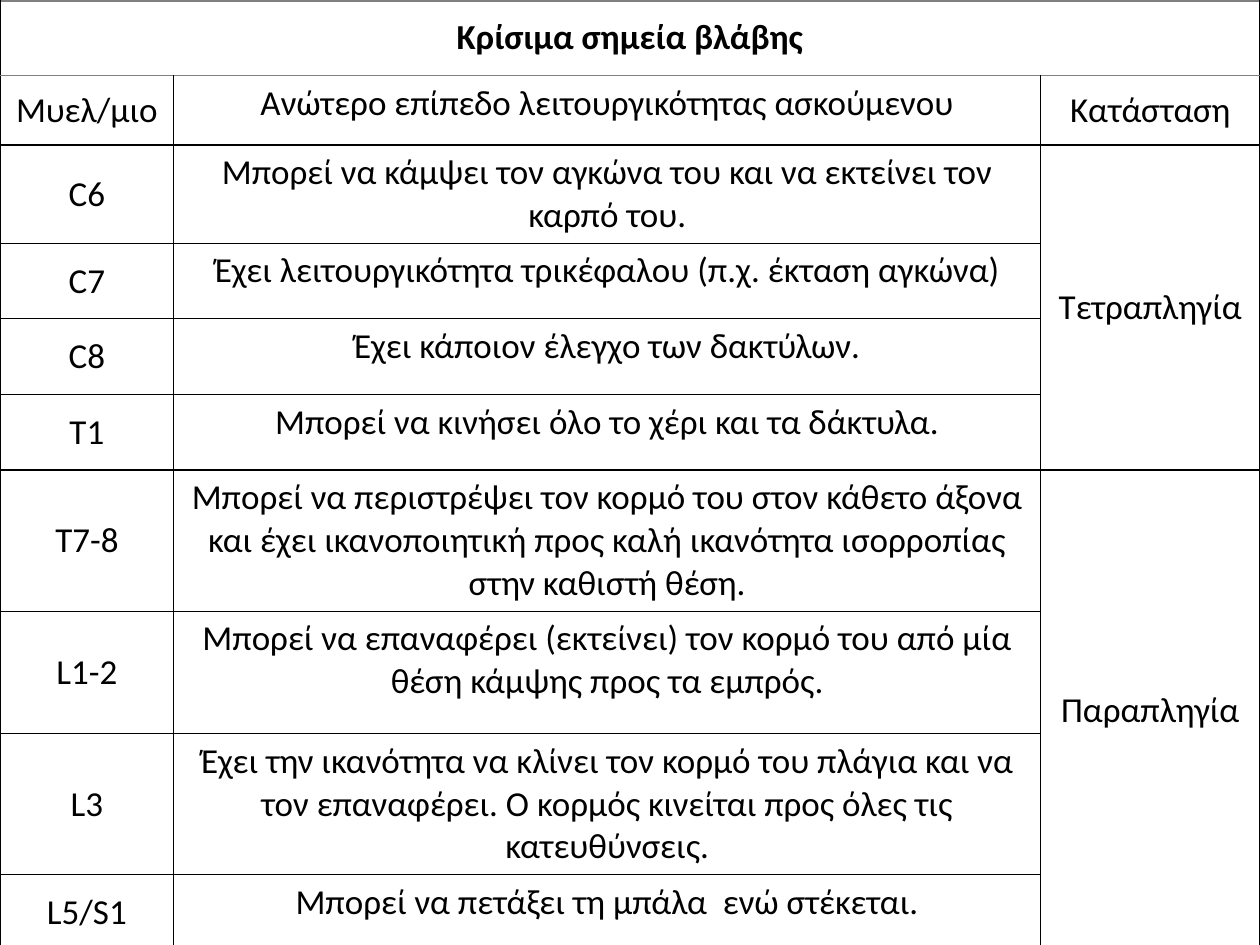
import pptx
import pptx.dml.color
import pptx.enum.text
import pptx.oxml.ns
import pptx.util
from dataclasses import dataclass
from lxml import etree

Pt = pptx.util.Pt
RGB = pptx.dml.color.RGBColor
ANCHOR = pptx.enum.text.MSO_ANCHOR
ALIGN = pptx.enum.text.PP_ALIGN


@dataclass(frozen=True)
class Theme:
    font: str = "Calibri"
    size: float = 20
    text: str = "000000"
    thin: tuple = ("000000", 0.75)
    section: tuple = ("000000", 1)
    heading: tuple = ("808080", 1)
    outer: tuple = ("808080", 2)


THEME = Theme()
TITLE = "Κρίσιμα σημεία βλάβης"
HEADER = ("Μυελ/μιο", "Ανώτερο επίπεδο λειτουργικότητας ασκούμενου", "Κατάσταση")
GROUPS = [
    ("Τετραπληγία", [
        ("C6", "Μπορεί να κάμψει τον αγκώνα του και να εκτείνει τον καρπό του."),
        ("C7", "Έχει λειτουργικότητα τρικέφαλου (π.χ. έκταση αγκώνα)"),
        ("C8", "Έχει κάποιον έλεγχο των δακτύλων."),
        ("T1", "Μπορεί να κινήσει όλο το χέρι και τα δάκτυλα."),
    ]),
    ("Παραπληγία", [
        ("T7-8", "Μπορεί να περιστρέψει τον κορμό του στον κάθετο άξονα και έχει "
                 "ικανοποιητική προς καλή ικανότητα ισορροπίας στην καθιστή θέση."),
        ("L1-2", "Μπορεί να επαναφέρει (εκτείνει) τον κορμό του από μία θέση κάμψης "
                 "προς τα εμπρός."),
        ("L3", "Έχει την ικανότητα να κλίνει τον κορμό του πλάγια και να τον επαναφέρει. "
               "Ο κορμός κινείται προς όλες τις κατευθύνσεις."),
        ("L5/S1", "Μπορεί να πετάξει τη μπάλα  ενώ στέκεται."),
    ]),
]
COL_WIDTHS = (99.36, 495.36, 125.28)
ROW_HEIGHTS = (43.2, 39.6) + (43.2,) * 4 + (69.84,) * 3 + (43.2,)


def set_border(cell, side, line):
    color, width = line
    ln = etree.SubElement(cell._tc.get_or_add_tcPr(), pptx.oxml.ns.qn(f"a:ln{side}"),
                          w=str(int(Pt(width))))
    fill = etree.SubElement(ln, pptx.oxml.ns.qn("a:solidFill"))
    etree.SubElement(fill, pptx.oxml.ns.qn("a:srgbClr"), val=color)


def fill_cell(cell, text, top, bottom, anchor=ANCHOR.MIDDLE, bold=False):
    for side, line in zip("LRTB", (THEME.thin, THEME.thin, top, bottom)):
        set_border(cell, side, line)
    cell.fill.background()
    cell.vertical_anchor = anchor
    cell.text_frame.text = text
    p = cell.text_frame.paragraphs[0]
    p.alignment = ALIGN.CENTER
    font = p.runs[0].font
    font.name, font.size, font.bold = THEME.font, Pt(THEME.size), bold
    font.color.rgb = RGB.from_string(THEME.text)


def add_lesion_table(slide, left, top, width, height):
    table = slide.shapes.add_table(len(ROW_HEIGHTS), len(COL_WIDTHS),
                                   Pt(left), Pt(top), Pt(width), Pt(height)).table
    table.first_row = table.horz_banding = False
    for col, w in zip(table.columns, COL_WIDTHS):
        col.width = Pt(w)
    for row, h in zip(table.rows, ROW_HEIGHTS):
        row.height = Pt(h)

    table.cell(0, 0).merge(table.cell(0, 2))
    fill_cell(table.cell(0, 0), TITLE, THEME.outer, THEME.heading, bold=True)
    anchors = (ANCHOR.MIDDLE, ANCHOR.TOP, ANCHOR.MIDDLE)
    for c, (text, anchor) in enumerate(zip(HEADER, anchors)):
        fill_cell(table.cell(1, c), text, THEME.heading, THEME.section, anchor)

    first = 2
    for status, levels in GROUPS:
        last = first + len(levels) - 1
        end = THEME.outer if last == len(ROW_HEIGHTS) - 1 else THEME.section
        table.cell(first, 2).merge(table.cell(last, 2))
        fill_cell(table.cell(first, 2), status, THEME.section, end)
        for r, level in enumerate(levels, first):
            above = THEME.section if r == first else THEME.thin
            below = end if r == last else THEME.thin
            for c, text in enumerate(level):
                fill_cell(table.cell(r, c), text, above, below, anchors[c])
        first = last + 1


def main():
    prs = pptx.Presentation()
    prs.slide_width, prs.slide_height = Pt(720), Pt(540)
    slide = prs.slides.add_slide(prs.slide_layouts[6])
    add_lesion_table(slide, 0, 0, 720, 540)
    prs.save("out.pptx")


if __name__ == "__main__":
    main()
